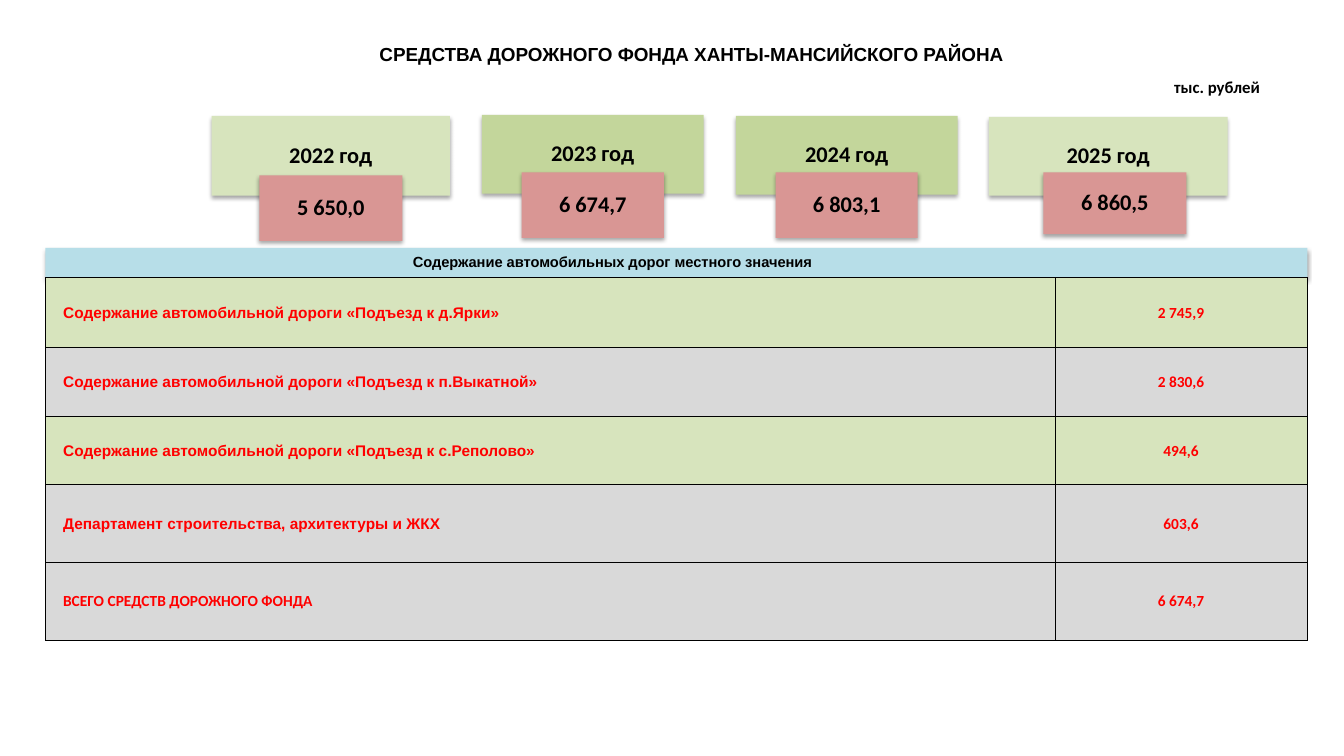
from pptx import Presentation
from pptx.dml.color import RGBColor
from pptx.enum.shapes import MSO_SHAPE as Preset
from pptx.enum.text import MSO_ANCHOR as Anchor, PP_ALIGN as Align
from pptx.oxml import parse_xml
from pptx.oxml.ns import nsdecls
from pptx.util import Pt

BLACK, RED, ROSE, SKY = "000000", "FF0000", "D99694", "B7DEE8"
PALE_GREEN, GREEN, GREY = "D7E4BD", "C3D69B", "D9D9D9"

YEARS = [
    ((151.2, 82.8, 170.2, 57), PALE_GREEN, "2022 год", "5 650,0", (0, 42.5, 102.2, 46.8)),
    ((344.2, 82.1, 158.4, 56.2), GREEN, "2023 год", "6 674,7", (0, 41, 101.6, 46.8)),
    ((525.6, 82.8, 158.4, 56.2), GREEN, "2024 год", "6 803,1", (0, 40.3, 101.6, 46.8)),
    ((706.3, 83.5, 170.6, 56.2), PALE_GREEN, "2025 год", "6 860,5", (4.7, 39.6, 102.2, 44.2)),
]

EXPENSES = [
    ("Содержание автомобильной дороги «Подъезд к д.Ярки»", "2 745,9", PALE_GREEN, 50),
    ("Содержание автомобильной дороги «Подъезд к п.Выкатной»", "2 830,6", GREY, 49.1),
    ("Содержание автомобильной дороги «Подъезд к с.Реполово»", "494,6", PALE_GREEN, 48.8),
    ("Департамент строительства, архитектуры и ЖКХ", "603,6", GREY, 55.5),
    ("ВСЕГО СРЕДСТВ ДОРОЖНОГО ФОНДА", "6 674,7", GREY, 55.5),
]


def color(value):
    return RGBColor.from_string(value)


def write(frame, text, size, font, tint=BLACK, align=Align.LEFT):
    frame.text = text
    para = frame.paragraphs[0]
    para.alignment = align
    para.font.size = Pt(size)
    para.font.name = font
    para.font.bold = True
    para.font.color.rgb = color(tint)
    return para


def add_shadow(shape):
    shape.shadow.inherit = False
    effects = shape.element.spPr.find("{*}effectLst")
    effects.append(parse_xml(
        f'<a:outerShdw {nsdecls("a")} blurRad="{Pt(3.1)}" dist="{Pt(1.8)}" '
        'dir="5400000" rotWithShape="0"><a:srgbClr val="000000">'
        '<a:alpha val="35000"/></a:srgbClr></a:outerShdw>'))


def add_panel(page, box, fill, text, size, font, right_inset=1):
    panel = page.shapes.add_shape(Preset.RECTANGLE, *map(Pt, box))
    panel.fill.solid()
    panel.fill.fore_color.rgb = color(fill)
    panel.line.fill.background()
    add_shadow(panel)
    frame = panel.text_frame
    frame.word_wrap = True
    frame.vertical_anchor = Anchor.MIDDLE
    frame.margin_left = frame.margin_top = frame.margin_bottom = Pt(1)
    frame.margin_right = Pt(right_inset)
    para = write(frame, text, size, font, align=Align.CENTER)
    para.line_spacing = 0.9


def add_heading(page, box):
    left, top, width, height = box
    title = page.shapes.title
    title.left, title.top, title.width, title.height = map(Pt, box)
    title.text_frame.vertical_anchor = Anchor.MIDDLE
    write(title.text_frame, "СРЕДСТВА ДОРОЖНОГО ФОНДА ХАНТЫ-МАНСИЙСКОГО РАЙОНА",
          13.5, "Arial", align=Align.CENTER)
    unit = page.shapes.add_textbox(Pt(left + 703.4), Pt(top + 30.2), Pt(102.2), Pt(21.6))
    unit.text_frame.word_wrap = True
    write(unit.text_frame, "тыс. рублей", 12, "Calibri")


def add_year(page, box, fill, year, amount, tag):
    left, top, width, height = box
    shift, drop, tag_width, tag_height = tag
    tag_left = left + (width - tag_width) / 2 + shift
    add_panel(page, box, fill, year, 16, "Calibri")
    add_panel(page, (tag_left, top + drop, tag_width, tag_height),
              ROSE, amount, 16, "Calibri")


def add_borders(cell):
    properties = cell._tc.get_or_add_tcPr()
    for index, side in enumerate("LRTB"):
        properties.insert(index, parse_xml(
            f'<a:ln{side} {nsdecls("a")} w="{Pt(0.5)}"><a:solidFill>'
            f'<a:srgbClr val="{BLACK}"/></a:solidFill></a:ln{side}>'))


def fill_cell(cell, text, fill, font, align, left_inset, right_inset):
    cell.fill.solid()
    cell.fill.fore_color.rgb = color(fill)
    cell.vertical_anchor = Anchor.MIDDLE
    cell.margin_left, cell.margin_right = Pt(left_inset), Pt(right_inset)
    cell.margin_top, cell.margin_bottom = Pt(0.7), Pt(0)
    write(cell.text_frame, text, 11, font, RED, align)
    add_borders(cell)


def add_expenses(page, box):
    left, top, width, height = box
    banner = 21.2
    add_panel(page, (left, top, width, banner), SKY,
              "Содержание автомобильных дорог местного значения", 10.5, "Arial", 92)
    table = page.shapes.add_table(len(EXPENSES), 2, Pt(left), Pt(top + banner),
                                  Pt(width), Pt(height - banner)).table
    table.first_row = table.horz_banding = False
    table.columns[0].width = Pt(width * 0.8)
    table.columns[1].width = Pt(width * 0.2)
    for index, (name, amount, fill, row_height) in enumerate(EXPENSES):
        table.rows[index].height = Pt(row_height)
        is_total = index == len(EXPENSES) - 1
        fill_cell(table.cell(index, 0), name, fill, "Calibri" if is_total else "Arial",
                  Align.LEFT, 12.7, 6.5)
        fill_cell(table.cell(index, 1), amount, fill, "Calibri", Align.CENTER, 0.7, 0.7)


def main():
    deck = Presentation()
    deck.slide_width, deck.slide_height = Pt(960), Pt(540)
    page = deck.slides.add_slide(deck.slide_layouts[5])
    add_heading(page, (128.2, 20.9, 731.5, 35.3))
    for year in YEARS:
        add_year(page, *year)
    add_expenses(page, (32.4, 177.1, 901.4, 280.1))
    deck.save("out.pptx")


if __name__ == "__main__":
    main()
